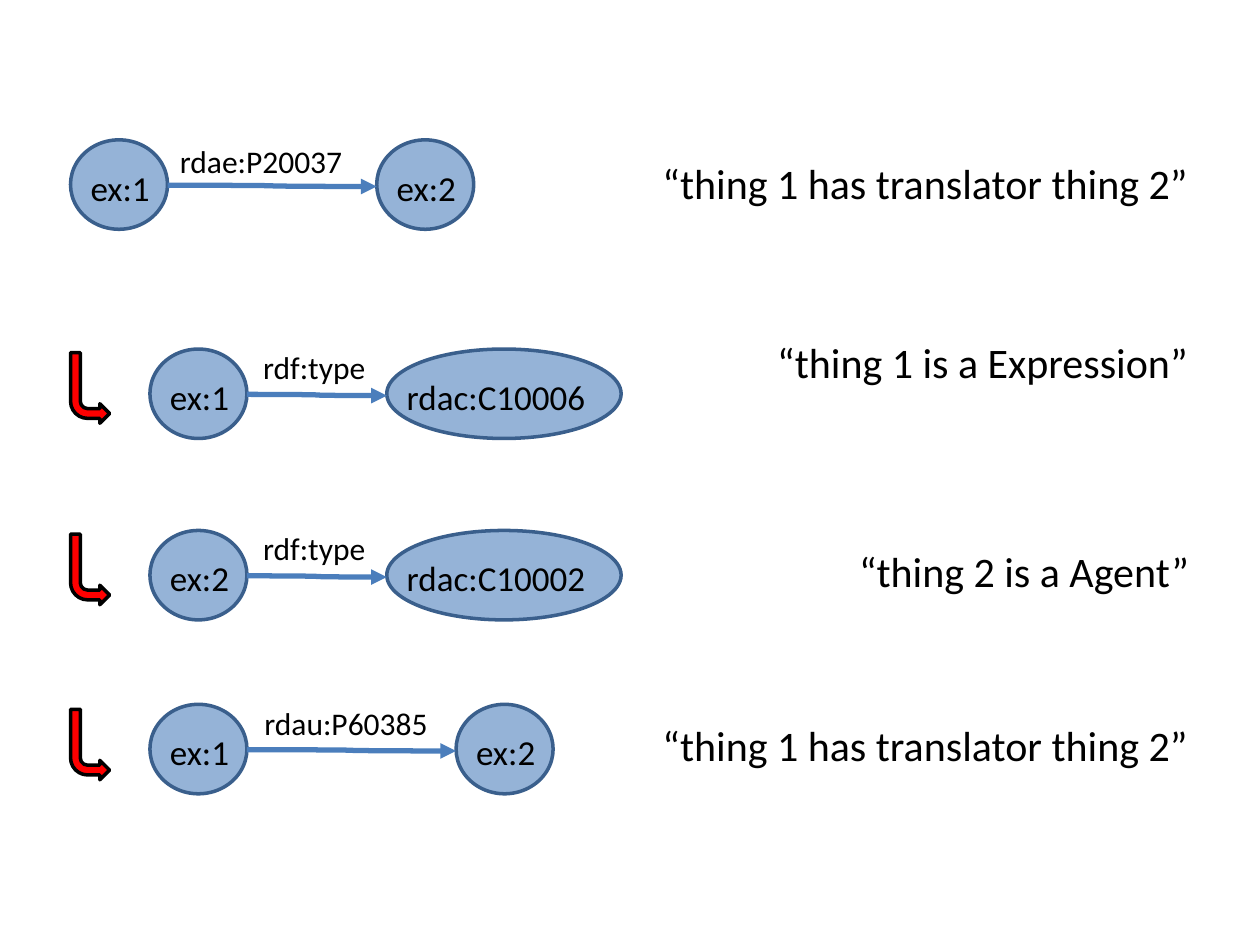
import pptx
import pptx.util
import pptx.dml.color
import pptx.enum.shapes
import pptx.enum.text
import pptx.oxml.ns
import lxml.etree

PX = 9144
BLUE = pptx.dml.color.RGBColor(0x95, 0xB3, 0xD7)
OUTLINE = pptx.dml.color.RGBColor(0x3A, 0x5F, 0x8C)
ARROW = pptx.dml.color.RGBColor(0x4B, 0x7E, 0xBC)
RED = pptx.dml.color.RGBColor(0xFF, 0x00, 0x00)
BLACK = pptx.dml.color.RGBColor(0x00, 0x00, 0x00)
SHAPE = pptx.enum.shapes.MSO_SHAPE
qn = pptx.oxml.ns.qn


def add_text(shapes, text, *, x, y, w, h, size):
    tb = shapes.add_textbox(x * PX, y * PX, w * PX, h * PX)
    tf = tb.text_frame
    tf.word_wrap = False
    tf.auto_size = pptx.enum.text.MSO_AUTO_SIZE.SHAPE_TO_FIT_TEXT
    r = tf.paragraphs[0].add_run()
    r.text = text
    r.font.name = "Calibri"
    r.font.size = pptx.util.Pt(size)
    r.font.color.rgb = BLACK


def add_preset(shapes, kind, x, y, w, h, fill, line):
    sp = shapes.add_shape(kind, x * PX, y * PX, w * PX, h * PX)
    sp.shadow.inherit = False
    sp.fill.solid()
    sp.fill.fore_color.rgb = fill
    sp.line.color.rgb = line
    sp.line.width = pptx.util.Pt(2)
    return sp


prs = pptx.Presentation()
prs.slide_width = 1000 * PX
prs.slide_height = 750 * PX
s = prs.slides.add_slide(prs.slide_layouts[6])

NODE_W, NODE_H, NODE_TEXT_W = 77, 71, 68
CLASS_W, CLASS_TEXT_W = 186, 163
RIGHT = 956

triples = [
    (56, 111, "ex:1", ("rdae:P20037", 133, 108, 150), ("ex:2", 299, NODE_W, NODE_TEXT_W)),
    (119, 277, "ex:1", ("rdf:type", 199, 271, 102), ("rdac:C10006", 307, CLASS_W, CLASS_TEXT_W)),
    (119, 421, "ex:2", ("rdf:type", 199, 415, 102), ("rdac:C10002", 307, CLASS_W, CLASS_TEXT_W)),
    (119, 559, "ex:1", ("rdau:P60385", 200, 554, 151), ("ex:2", 362, NODE_W, NODE_TEXT_W)),
]
for x, y, subject, (label, label_x, label_y, label_w), (obj, obj_x, obj_w, obj_text_w) in triples:
    shapes = s.shapes.add_group_shape().shapes
    for text, left, width, text_w in ((subject, x, NODE_W, NODE_TEXT_W), (obj, obj_x, obj_w, obj_text_w)):
        add_preset(shapes, SHAPE.OVAL, left, y, width, NODE_H, BLUE, OUTLINE)
        add_text(shapes, text, x=left + 6, y=y + 16, w=text_w, h=44, size=20)
    cx = shapes.add_connector(
        pptx.enum.shapes.MSO_CONNECTOR.CURVE,
        (x + NODE_W) * PX, (y + 36) * PX, obj_x * PX, (y + 37) * PX)
    cx.line.color.rgb = ARROW
    cx.line.width = pptx.util.Pt(3)
    lxml.etree.SubElement(cx.line._get_or_add_ln(), qn("a:tailEnd"), type="triangle")
    lxml.etree.SubElement(cx._element.spPr, qn("a:effectLst"))
    add_text(shapes, label, x=label_x, y=label_y, w=label_w, h=40, size=18)

for y in (280, 424, 563):
    sp = add_preset(s.shapes, SHAPE.BENT_ARROW, 56, y, 31, 56, RED, BLACK)
    sp._element.spPr.find(qn("a:xfrm")).set("flipV", "1")

statements = [
    ("“thing 1 has translator thing 2”", 120, 440),
    ("“thing 1 is a Expression”", 262, 349),
    ("“thing 2 is a Agent”", 428, 284),
    ("“thing 1 has translator thing 2”", 566, 440),
]
for text, y, w in statements:
    add_text(s.shapes, text, x=RIGHT - w, y=y, w=w, h=50, size=24)

prs.save("out.pptx")
